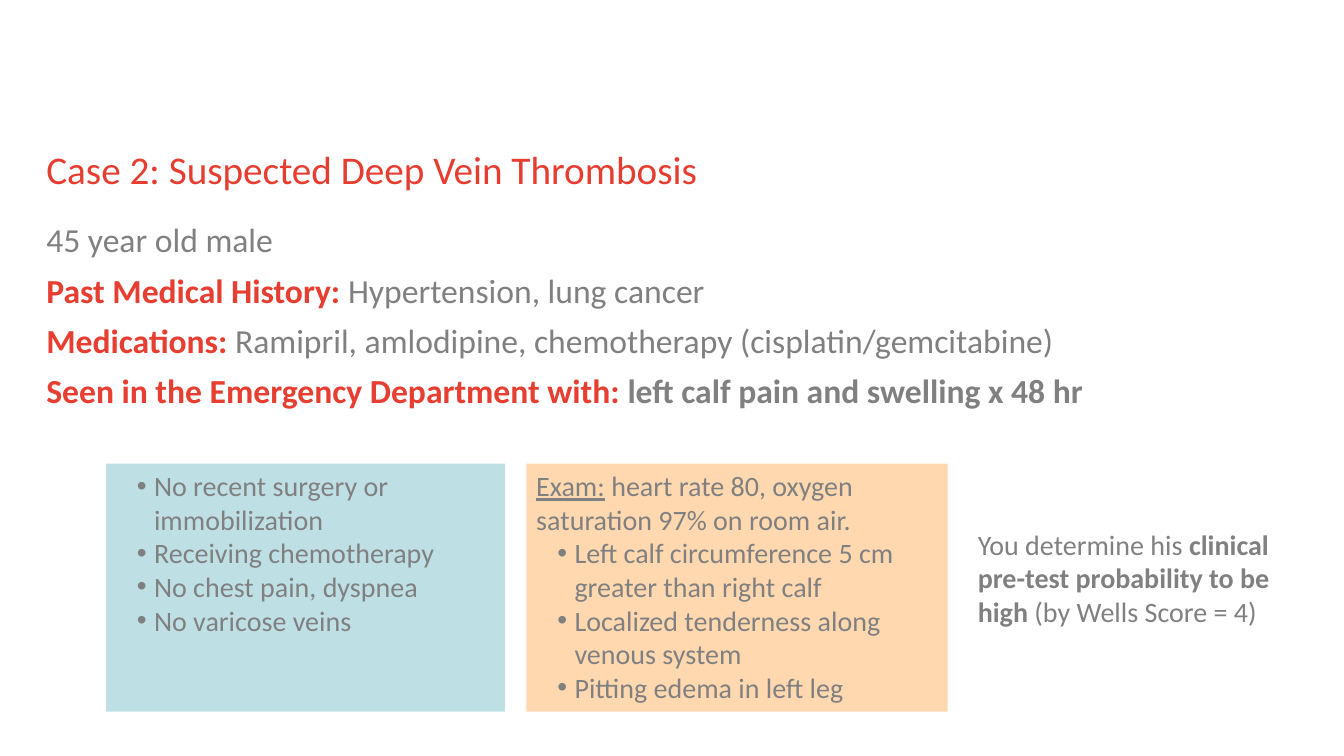
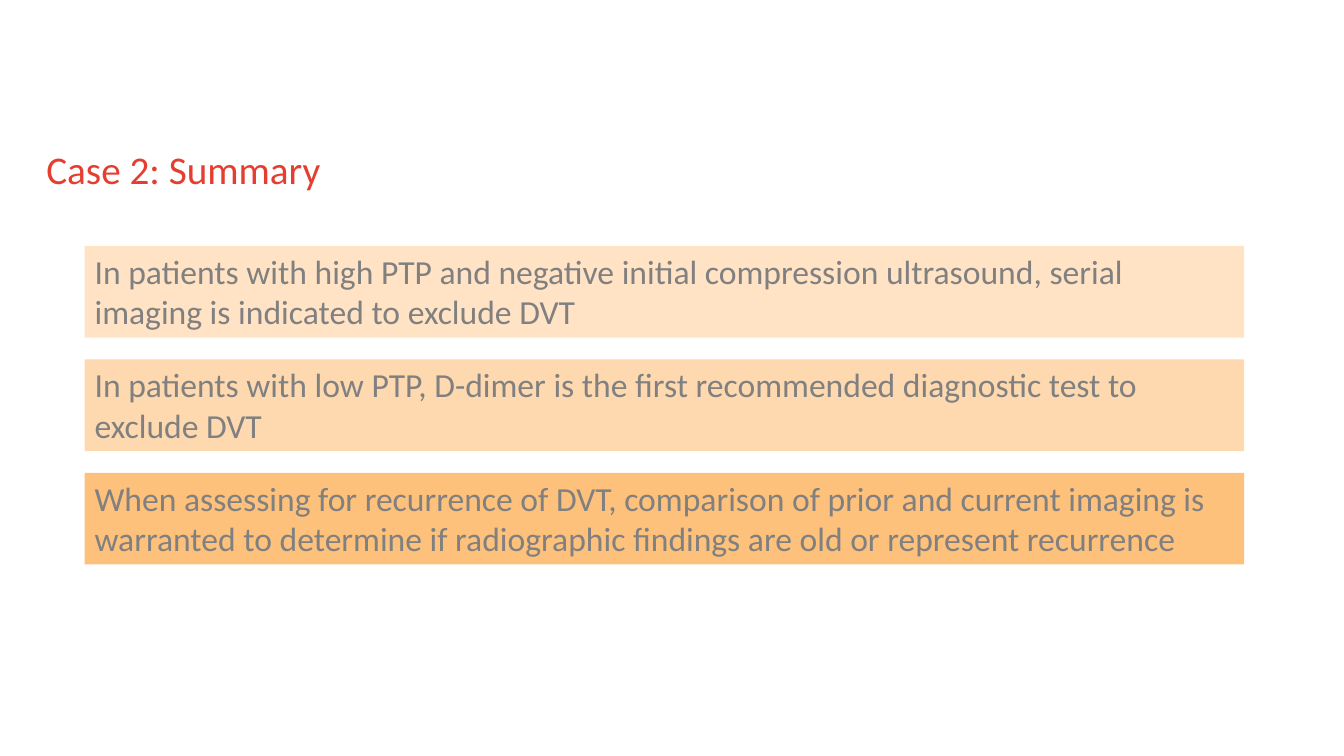
from pptx import Presentation
from pptx.dml.color import RGBColor
from pptx.enum import shapes, text
from pptx.oxml.ns import qn
from pptx.util import Inches, Pt
from lxml import etree

FONT = "Calibri"
TITLE_RED = RGBColor(0xE5, 0x3E, 0x31)
LABEL_RED = RGBColor(0xE6, 0x3E, 0x31)
GRAY = RGBColor(0x80, 0x80, 0x80)
TEAL = RGBColor(0xBE, 0xE0, 0xE4)
PEACH = RGBColor(0xFF, 0xD8, 0xB0)
SUMMARY_FILLS = (
    RGBColor(0xFF, 0xE3, 0xC4),
    RGBColor(0xFE, 0xD9, 0xAF),
    RGBColor(0xFD, 0xC1, 0x7B),
)

HISTORY = [
    [("45 year old male", {})],
    [("Past Medical History: ", {"bold": True, "color": LABEL_RED}),
     ("Hypertension, lung cancer", {})],
    [("Medications: ", {"bold": True, "color": LABEL_RED}),
     ("Ramipril, amlodipine, chemotherapy (cisplatin/gemcitabine)", {})],
    [("Seen in the Emergency Department with: ", {"bold": True, "color": LABEL_RED}),
     ("left calf pain and swelling x 48 hr", {"bold": True})],
]
RISKS = [
    "No recent surgery or immobilization",
    "Receiving chemotherapy",
    "No chest pain, dyspnea",
    "No varicose veins",
]
EXAM = [
    ("Exam:", {"underline": True}),
    (" heart rate 80, oxygen saturation 97% on room air.", {}),
]
FINDINGS = [
    "Left calf circumference 5 cm greater than right calf",
    "Localized tenderness along venous system",
    "Pitting edema in left leg",
]
VERDICT = [
    ("You determine his ", {}),
    ("clinical pre-test probability to be high ", {"bold": True}),
    ("(by Wells Score = 4)", {}),
]
SUMMARY = [
    "In patients with high PTP and negative initial compression ultrasound, "
    "serial imaging is indicated to exclude DVT",
    "In patients with low PTP, D-dimer is the first recommended diagnostic test "
    "to exclude DVT",
    "When assessing for recurrence of DVT, comparison of prior and current imaging "
    "is warranted to determine if radiographic findings are old or represent recurrence",
]


def add_run(p, words, size, color=GRAY, bold=False, underline=False):
    r = p.add_run()
    r.text = words
    r.font.name = FONT
    r.font.size = Pt(size)
    r.font.color.rgb = color
    r.font.bold = bold
    r.font.underline = underline


def add_bullet(p):
    pPr = p._p.get_or_add_pPr()
    pPr.set("marL", str(Inches(0.38)))
    pPr.set("indent", str(Inches(-0.17)))
    etree.SubElement(pPr, qn("a:buFont")).set("typeface", "Arial")
    etree.SubElement(pPr, qn("a:buChar")).set("char", "•")


def write(tf, paragraphs, size, bullets_from=None, line=None, gap=0):
    tf.word_wrap = True
    for i, runs in enumerate(paragraphs):
        p = tf.paragraphs[0] if i == 0 else tf.add_paragraph()
        p.alignment = text.PP_ALIGN.LEFT
        if line:
            p.line_spacing = line
        if i and gap:
            p.space_before = Pt(gap)
        if bullets_from is not None and i >= bullets_from:
            add_bullet(p)
        for words, style in runs:
            add_run(p, words, size, **style)


def clear_margins(tf):
    tf.margin_left = tf.margin_right = tf.margin_top = tf.margin_bottom = 0


def plain(lines):
    return [[(words, {})] for words in lines]


def add_titled_slide(prs, words):
    s = prs.slides.add_slide(prs.slide_layouts[5])
    title = s.shapes.title
    title.left, title.top = Inches(0.46), Inches(1.47)
    title.width, title.height = Inches(12), Inches(0.46)
    tf = title.text_frame
    clear_margins(tf)
    tf.auto_size = text.MSO_AUTO_SIZE.NONE
    tf.vertical_anchor = text.MSO_ANCHOR.MIDDLE
    write(tf, [[(words, {"color": TITLE_RED})]], 28, line=0.9)
    return s


def add_text(s, box, paragraphs, size, margins=True, **layout):
    tf = s.shapes.add_textbox(*map(Inches, box)).text_frame
    if not margins:
        clear_margins(tf)
    write(tf, paragraphs, size, **layout)


def add_panel(s, box, fill, paragraphs, size, bullets_from=None):
    sp = s.shapes.add_shape(shapes.MSO_SHAPE.RECTANGLE, *map(Inches, box))
    sp.shadow.inherit = False
    sp.fill.solid()
    sp.fill.fore_color.rgb = fill
    sp.line.fill.background()
    sp.text_frame.vertical_anchor = text.MSO_ANCHOR.TOP
    write(sp.text_frame, paragraphs, size, bullets_from)


def add_summary(s, box, bar_height=0.91):
    left, top, width, height = box
    pitch = (height - bar_height) / (len(SUMMARY) - 1)
    for i, (fill, paragraph) in enumerate(zip(SUMMARY_FILLS, plain(SUMMARY))):
        add_panel(s, (left, top + i * pitch, width, bar_height), fill, [paragraph], 24)


def case_slide(prs):
    s = add_titled_slide(prs, "Case 2: Suspected Deep Vein Thrombosis")
    add_text(s, (0.46, 2.22, 12, 4.32), HISTORY, 24, margins=False, line=0.9, gap=10)
    add_text(s, (9.6, 5.18, 3.44, 1.11), [VERDICT], 20)
    add_panel(s, (1.05, 4.6, 3.96, 2.46), TEAL, plain(RISKS), 20, bullets_from=0)
    add_panel(s, (5.22, 4.6, 4.18, 2.46), PEACH, [EXAM] + plain(FINDINGS), 20, bullets_from=1)


def summary_slide(prs):
    s = add_titled_slide(prs, "Case 2: Summary")
    add_summary(s, (0.84, 2.44, 11.5, 3.16))


def main():
    prs = Presentation()
    prs.slide_width, prs.slide_height = Inches(13.33), Inches(7.5)
    case_slide(prs)
    summary_slide(prs)
    prs.save("out.pptx")


if __name__ == "__main__":
    main()
